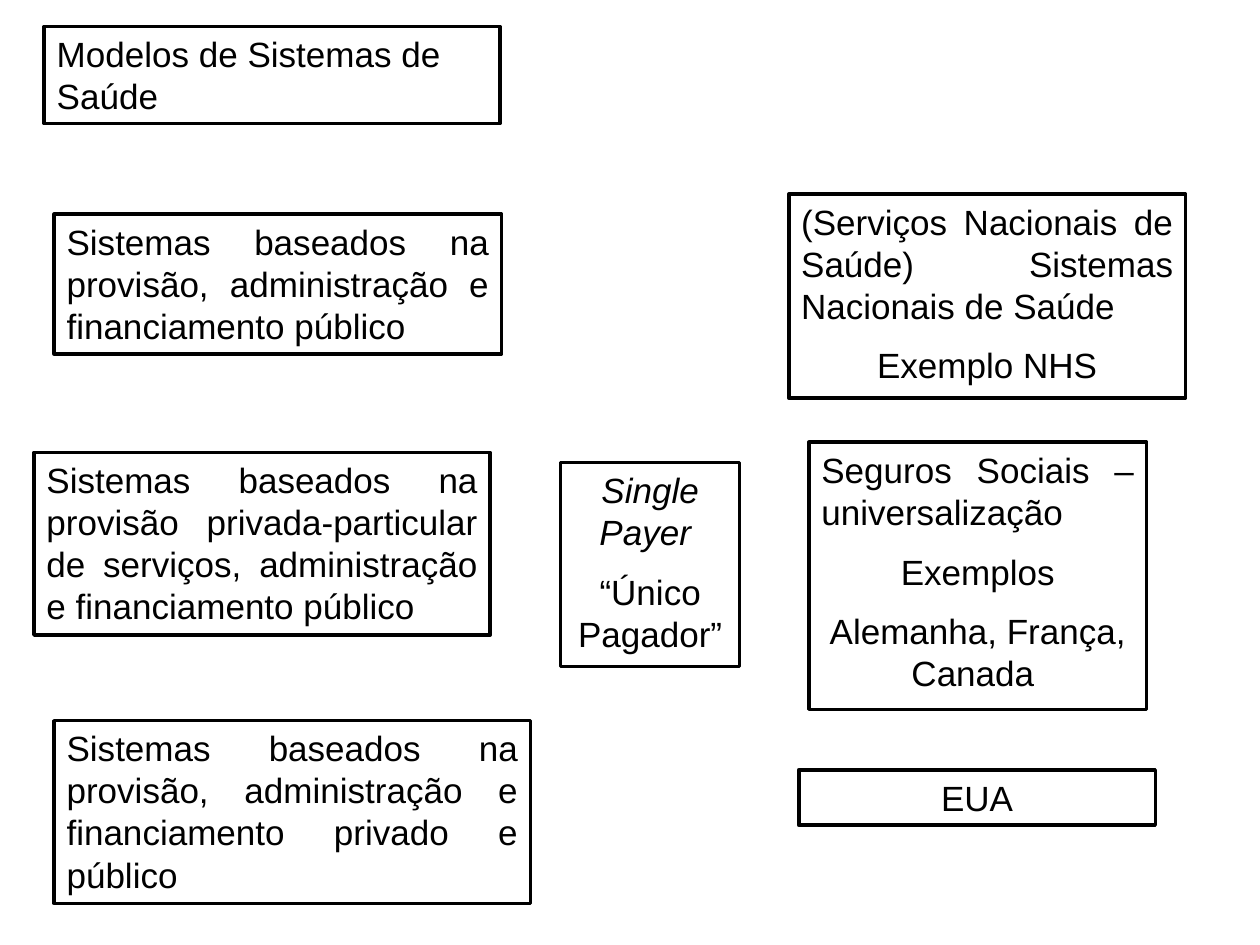
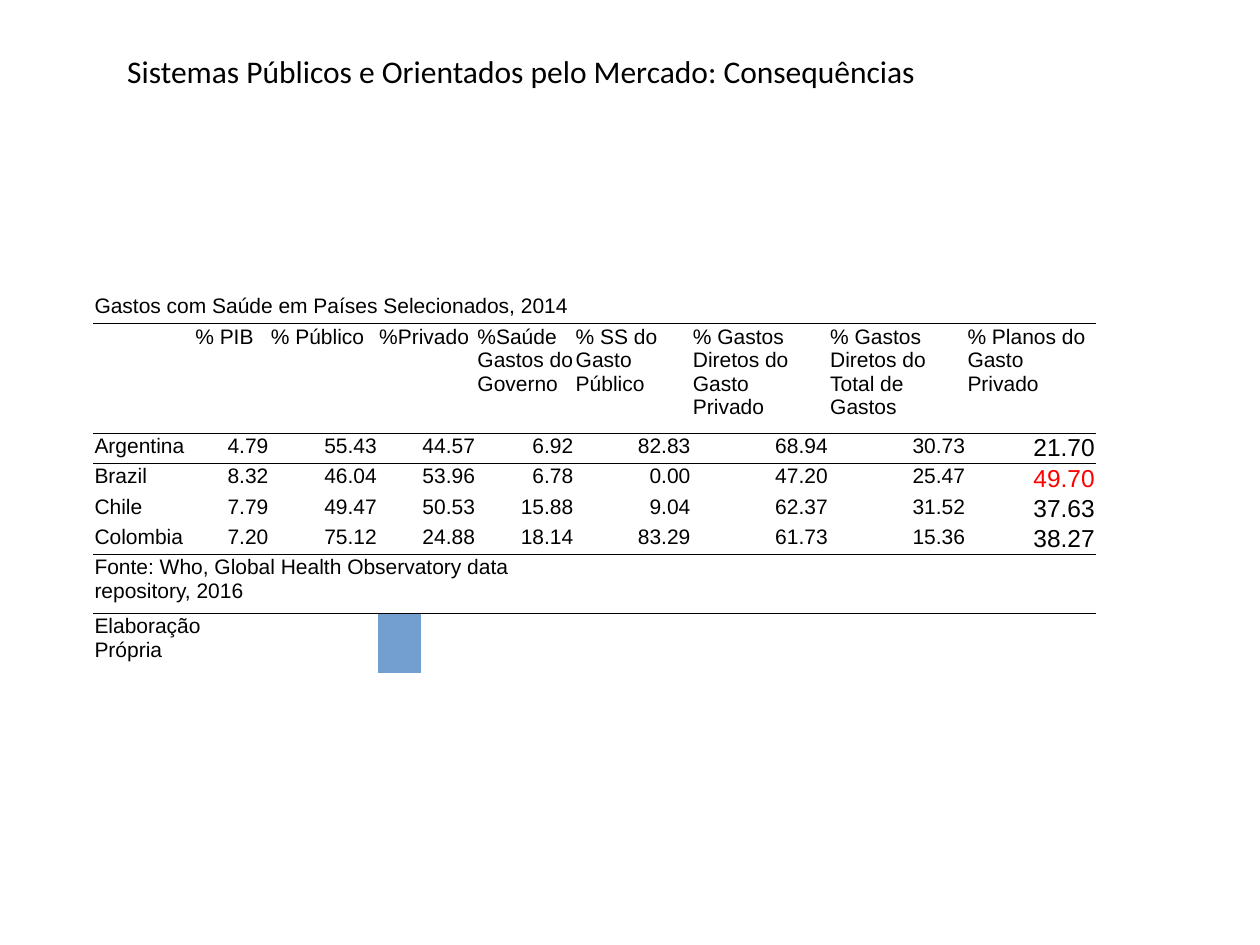
"""Build two slides on health system models and health spending by country."""
from dataclasses import dataclass
from typing import NamedTuple

from lxml.etree import SubElement
from pptx import Presentation
from pptx.dml.color import RGBColor
from pptx.enum.shapes import MSO_SHAPE
from pptx.enum.text import MSO_ANCHOR, MSO_AUTO_SIZE, PP_ALIGN as Align
from pptx.oxml.ns import qn
from pptx.util import Inches, Pt


@dataclass(frozen=True)
class Theme:
    """Colours, fonts, type sizes, line widths and table style."""
    ink: RGBColor = RGBColor(0, 0, 0)
    paper: RGBColor = RGBColor(255, 255, 255)
    accent: RGBColor = RGBColor(255, 0, 0)
    body_font: str = "Arial"
    title_font: str = "Calibri"
    box_size: int = 20
    title_size: int = 18
    cell_size: int = 12
    plan_size: int = 14
    gap: int = 10
    box_line: float = 2
    rule: float = 0.5
    plain_table: str = "{2D5ABB26-0587-4C30-8999-92F81FD0307C}"


class Para(NamedTuple):
    """One paragraph of a box."""
    text: str
    align: Align = Align.CENTER
    italic: bool = False


class Box(NamedTuple):
    """An outlined box: place in inches and its paragraphs."""
    left: float
    top: float
    width: float
    height: float
    paras: tuple[Para, ...]


T = Theme()
JUST = Align.JUSTIFY

HEADING = Box(0.35, 0.21, 3.62, 0.77, (Para("Modelos de Sistemas de Saúde", Align.LEFT),))
BOXES = (
    Box(0.43, 1.7, 3.55, 1.11, (
        Para("Sistemas baseados na provisão, administração e financiamento público", JUST),)),
    Box(6.26, 1.54, 3.15, 1.62, (
        Para("(Serviços Nacionais de Saúde) Sistemas Nacionais de Saúde", JUST),
        Para("Exemplo NHS"))),
    Box(0.27, 3.59, 3.62, 1.45, (
        Para("Sistemas baseados na provisão privada-particular de serviços, "
             "administração e financiamento público", JUST),)),
    Box(6.42, 3.51, 2.68, 2.12, (
        Para("Seguros Sociais – universalização", JUST),
        Para("Exemplos"),
        Para("Alemanha, França, Canada "))),
    Box(4.45, 3.67, 1.42, 1.62, (
        Para("Single Payer ", italic=True),
        Para("“Único Pagador”"))),
    Box(0.43, 5.72, 3.78, 1.45, (
        Para("Sistemas baseados na provisão, administração e "
             "financiamento privado e público", JUST),)),
    Box(6.34, 6.11, 2.83, 0.44, (Para("EUA"),)),
)

CAPTION = "Gastos com Saúde em Países Selecionados, 2014"
HEADERS = ("", "% PIB", "% Público", "%Privado", "%Saúde Gastos do Governo",
           "% SS do Gasto Público", "% Gastos Diretos do Gasto Privado",
           "% Gastos Diretos do Total de Gastos", "% Planos do Gasto Privado")
SPENDING = (
    ("Argentina", 4.79, 55.43, 44.57, 6.92, 82.83, 68.94, 30.73, 21.70),
    ("Brazil", 8.32, 46.04, 53.96, 6.78, 0.00, 47.20, 25.47, 49.70),
    ("Chile", 7.79, 49.47, 50.53, 15.88, 9.04, 62.37, 31.52, 37.63),
    ("Colombia", 7.20, 75.12, 24.88, 18.14, 83.29, 61.73, 15.36, 38.27),
)
SOURCE = "Fonte: Who, Global Health Observatory data repository, 2016"
CREDIT = "Elaboração Própria"
COL_WIDTHS = (0.8, 0.6, 0.6, 0.26, 0.34, 0.44, 0.78, 0.93, 1.09, 1.09, 1.03)
ROW_HEIGHTS = (0.24, 0.87, 0.24, 0.24, 0.24, 0.24, 0.47, 0.47)
FIELD_COLS = (0, 1, 2, 4, 6, 7, 8, 9, 10)
HEADER_ROW, SOURCE_ROW, CREDIT_ROW = 1, 6, 7
RULED_ROWS = (0, HEADER_ROW, SOURCE_ROW - 1)


def add_run(p, text: str, size: float, font: str = T.body_font,
            color: RGBColor = T.ink, italic: bool = False) -> None:
    """Add one formatted run to a paragraph."""
    r = p.add_run()
    r.text = text
    r.font.size, r.font.name, r.font.italic = Pt(size), font, italic
    r.font.color.rgb = color


def place(sp, left: float, top: float, width: float, height: float) -> None:
    """Move and size a shape, and make its text wrap from the top."""
    sp.left, sp.top, sp.width, sp.height = map(Inches, (left, top, width, height))
    tf = sp.text_frame
    tf.word_wrap = True
    tf.auto_size = MSO_AUTO_SIZE.NONE
    tf.vertical_anchor = MSO_ANCHOR.TOP


def fill_box(sp, box: Box) -> None:
    """Outline a shape and write the paragraphs of a box in it."""
    place(sp, *box[:4])
    sp.fill.solid()
    sp.fill.fore_color.rgb = T.paper
    sp.line.color.rgb = T.ink
    sp.line.width = Pt(T.box_line)
    tf = sp.text_frame
    for i, para in enumerate(box.paras):
        p = tf.add_paragraph() if i else tf.paragraphs[0]
        p.alignment = para.align
        p.space_before = Pt(T.gap if i else 0)
        add_run(p, para.text, T.box_size, italic=para.italic)


def set_rules(cell, top: bool, bottom: bool) -> None:
    """Draw the horizontal rules of a cell."""
    tc_pr = cell._tc.get_or_add_tcPr()
    for side, ruled in (("T", top), ("B", bottom)):
        if ruled:
            ln = SubElement(tc_pr, qn(f"a:ln{side}"), w=str(Pt(T.rule)))
            SubElement(SubElement(ln, qn("a:solidFill")), qn("a:srgbClr"), val=str(T.ink))


def table_texts() -> dict[tuple[int, int], str]:
    """Map each row and column of the table to its text."""
    texts = {(0, 0): CAPTION, (SOURCE_ROW, 0): SOURCE, (CREDIT_ROW, 0): CREDIT}
    for row, record in enumerate((HEADERS, *SPENDING), start=HEADER_ROW):
        for col, value in zip(FIELD_COLS, record):
            texts[row, col] = value if isinstance(value, str) else f"{value:.2f}"
    return texts


def write_cell(cell, row: int, col: int, text: str) -> None:
    """Set the margins, rules and text of one cell."""
    wide_header = row == HEADER_ROW and COL_WIDTHS[col] > 1
    cell.margin_left = cell.margin_top = Inches(0.01)
    cell.margin_right = Inches(0.05 if wide_header else 0.01)
    cell.margin_bottom = 0
    set_rules(cell, row - 1 in RULED_ROWS, row in RULED_ROWS)
    cell.fill.background()
    p = cell.text_frame.paragraphs[0]
    if not text:
        SubElement(p._p, qn("a:endParaRPr"), sz=str(T.cell_size * 100))
        return
    is_data = HEADER_ROW < row < SOURCE_ROW
    is_plan = is_data and col == FIELD_COLS[-1]
    p.alignment = Align.RIGHT if is_data and col else Align.LEFT
    add_run(p, text, T.plan_size if is_plan else T.cell_size,
            color=T.accent if is_plan and text == "49.70" else T.ink)


def add_spending_table(s) -> None:
    """Add the ruled table of health spending."""
    tbl = s.shapes.add_table(
        len(ROW_HEIGHTS), len(COL_WIDTHS), Inches(0.74), Inches(2.33),
        Inches(sum(COL_WIDTHS)), Inches(sum(ROW_HEIGHTS))).table
    tbl.first_row = tbl.horz_banding = False
    tbl._tbl.tblPr.find(qn("a:tableStyleId")).text = T.plain_table
    for column, width in zip(tbl.columns, COL_WIDTHS):
        column.width = Inches(width)
    for row, height in zip(tbl.rows, ROW_HEIGHTS):
        row.height = Inches(height)

    texts = table_texts()
    for row in range(len(ROW_HEIGHTS)):
        for col in range(len(COL_WIDTHS)):
            write_cell(tbl.cell(row, col), row, col, texts.get((row, col), ""))

    for row in (0, SOURCE_ROW):
        tbl.cell(row, 0).merge(tbl.cell(row, 6))
    for row in range(HEADER_ROW, SOURCE_ROW):
        for col in (2, 4):
            tbl.cell(row, col).merge(tbl.cell(row, col + 1))
    for col in (0, 2, 4):
        tbl.cell(CREDIT_ROW, col).merge(tbl.cell(CREDIT_ROW, col + 1))


def build_models(s) -> None:
    """Build the slide of health system models."""
    fill_box(s.shapes.title, HEADING)
    for box in BOXES:
        sp = s.shapes.add_shape(MSO_SHAPE.RECTANGLE, 0, 0, 0, 0)
        sp.shadow.inherit = False
        fill_box(sp, box)


def build_spending(s) -> None:
    """Build the slide of spending by country."""
    title = s.shapes.title
    place(title, 0.91, 0.36, 6.93, 0.4)
    p = title.text_frame.paragraphs[0]
    p.alignment = Align.LEFT
    add_run(p, "Sistemas Públicos e Orientados pelo Mercado: Consequências",
            T.title_size, T.title_font)
    add_spending_table(s)


def main() -> None:
    """Build and save the presentation."""
    prs = Presentation()
    prs.slide_width, prs.slide_height = Inches(10), Inches(7.5)
    title_only = prs.slide_layouts[5]
    for build in (build_models, build_spending):
        build(prs.slides.add_slide(title_only))
    prs.save("out.pptx")


if __name__ == "__main__":
    main()
